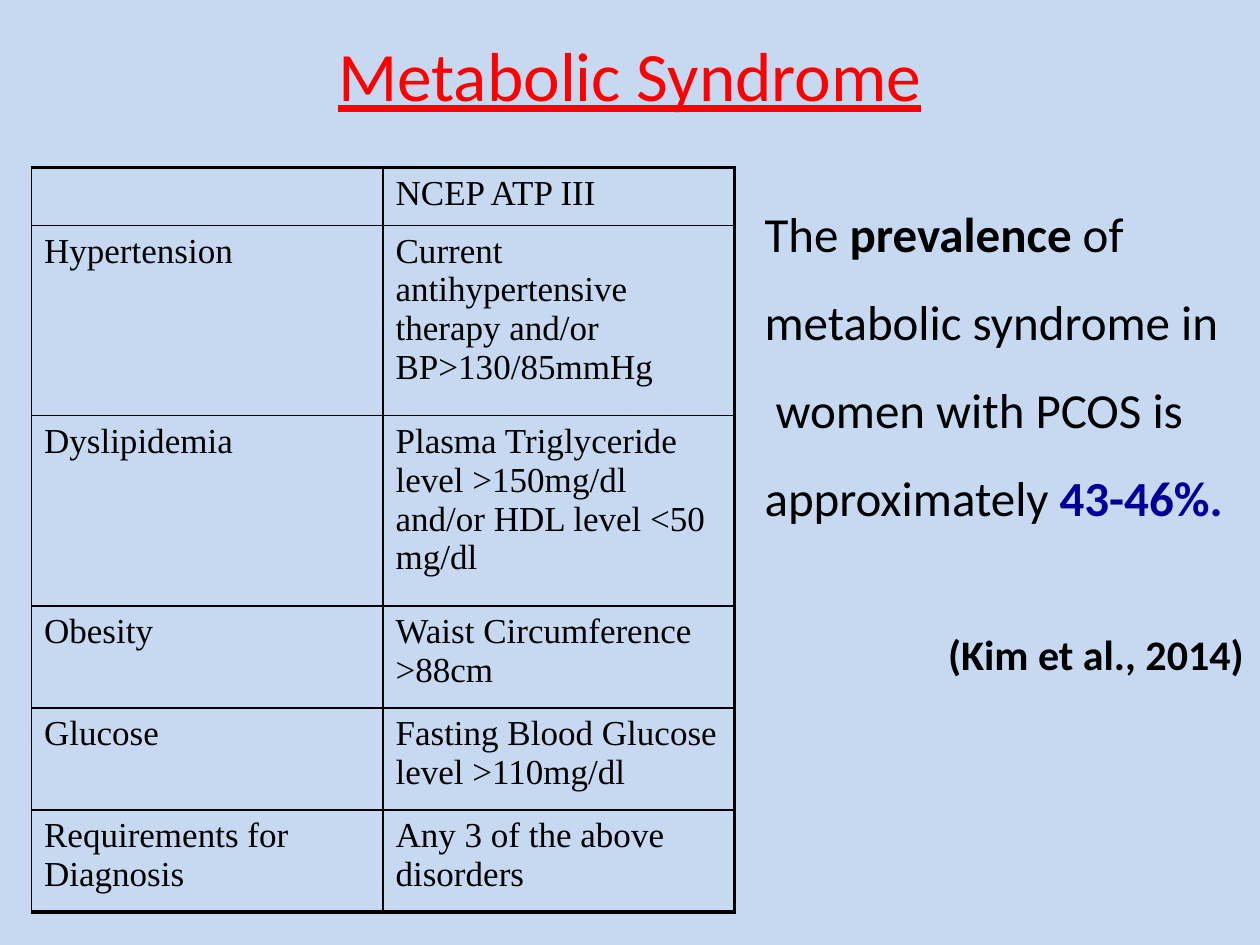
from dataclasses import dataclass
from lxml.etree import SubElement
from pptx import Presentation
from pptx.dml.color import RGBColor
from pptx.enum.text import MSO_ANCHOR, PP_ALIGN
from pptx.oxml.ns import qn
from pptx.util import Inches, Pt


@dataclass(frozen=True)
class Theme:
    background: str = "C6D9F1"
    ink: str = "000000"
    title: str = "FF0000"
    accent: str = "000099"
    sans: str = "Calibri"
    serif: str = "Times New Roman"
    title_size: float = 39.6
    body_size: float = 28
    source_size: float = 24
    table_size: float = 20
    inner_line: float = 1
    outer_line: float = 2.25


THEME = Theme()

TITLE = "Metabolic Syndrome"
CRITERIA = [
    ("", "NCEP ATP III", 0.46),
    ("Hypertension", "Current antihypertensive therapy and/or BP>130/85mmHg", 1.51),
    ("Dyslipidemia", "Plasma Triglyceride level >150mg/dl and/or HDL level <50 mg/dl", 1.51),
    ("Obesity", "Waist Circumference >88cm", 0.81),
    ("Glucose", "Fasting Blood Glucose level >110mg/dl", 0.81),
    ("Requirements for Diagnosis", "Any 3 of the above disorders", 0.81),
]
PREVALENCE = [
    [("The ", False, THEME.ink), ("prevalence", True, THEME.ink),
     (" of metabolic syndrome in", False, THEME.ink)],
    [(" women with PCOS is approximately ", False, THEME.ink),
     ("43-46%.", True, THEME.accent)],
]
SOURCE = "(Kim et al., 2014)"


def add_run(p, text, size, font=THEME.sans, color=THEME.ink, bold=False):
    r = p.add_run()
    r.text = text
    r.font.size = Pt(size)
    r.font.name = font
    r.font.bold = bold
    r.font.color.rgb = RGBColor.from_string(color)
    return r


def add_box(s, left, top, width, height):
    tf = s.shapes.add_textbox(*map(Inches, (left, top, width, height))).text_frame
    tf.word_wrap = True
    return tf


def set_borders(cell, widths):
    tcPr = cell._tc.get_or_add_tcPr()
    for side, width in widths.items():
        ln = SubElement(tcPr, qn(f"a:ln{side}"), w=str(Pt(width)))
        fill = SubElement(ln, qn("a:solidFill"))
        SubElement(fill, qn("a:srgbClr"), val=THEME.ink)


def add_title(s):
    tf = add_box(s, 0.75, 0.25, 8.5, 0.67)
    tf.vertical_anchor = MSO_ANCHOR.MIDDLE
    p = tf.paragraphs[0]
    p.alignment = PP_ALIGN.CENTER
    add_run(p, TITLE, THEME.title_size, color=THEME.title).font.underline = True


def add_criteria(s):
    height = sum(row[2] for row in CRITERIA)
    table = s.shapes.add_table(len(CRITERIA), 2, Inches(0.25), Inches(1.33),
                               Inches(5.58), Inches(height)).table
    table.first_row = table.horz_banding = False
    last = len(CRITERIA) - 1
    thin, thick = THEME.inner_line, THEME.outer_line
    for i, (*texts, row_height) in enumerate(CRITERIA):
        table.rows[i].height = Inches(row_height)
        for j, text in enumerate(texts):
            cell = table.cell(i, j)
            set_borders(cell, {
                "L": thin,
                "R": thick if j == 1 else thin,
                "T": thick if i == 0 else thin,
                "B": thick if i == last else thin,
            })
            cell.fill.background()
            if text:
                add_run(cell.text_frame.paragraphs[0], text, THEME.table_size, THEME.serif)


def add_prevalence(s):
    tf = add_box(s, 5.97, 1.33, 4, 4.14)
    for i, runs in enumerate(PREVALENCE):
        p = tf.add_paragraph() if i else tf.paragraphs[0]
        p.line_spacing = 1.5
        for text, bold, color in runs:
            add_run(p, text, THEME.body_size, color=color, bold=bold)
    p = tf.add_paragraph()
    p.alignment = PP_ALIGN.RIGHT
    p.line_spacing = 1.5
    p.space_before = Pt(44)
    add_run(p, SOURCE, THEME.source_size, bold=True)


def main():
    prs = Presentation()
    prs.slide_width, prs.slide_height = Inches(10), Inches(7.5)
    s = prs.slides.add_slide(prs.slide_layouts[6])
    s.background.fill.solid()
    s.background.fill.fore_color.rgb = RGBColor.from_string(THEME.background)
    add_title(s)
    add_criteria(s)
    add_prevalence(s)
    prs.save("out.pptx")


if __name__ == "__main__":
    main()
